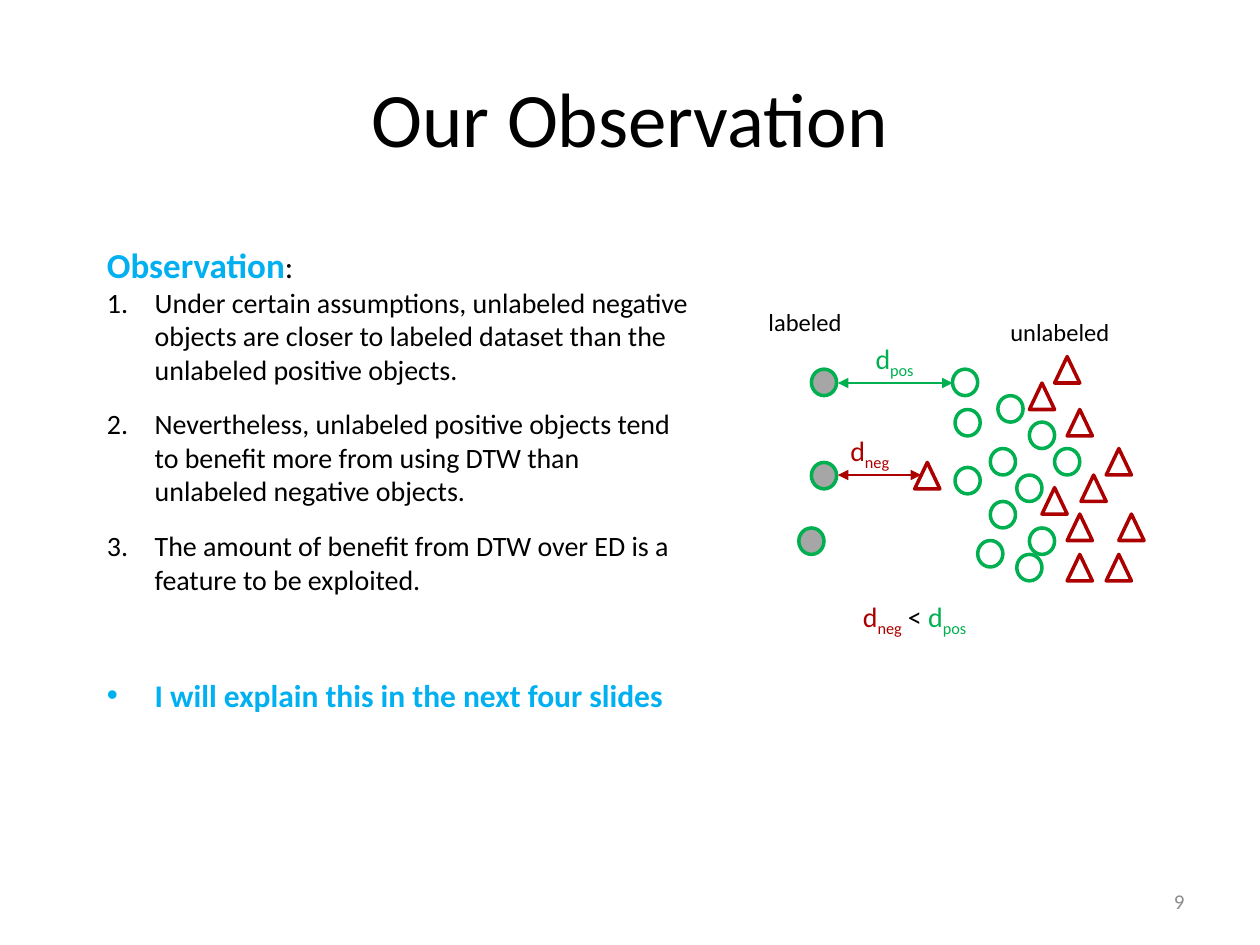
from lxml import etree
from pptx import Presentation
from pptx import util as u
from pptx.dml.color import RGBColor
from pptx.enum import shapes, text
from pptx.oxml.ns import qn

POSITIVE, NEGATIVE, LABELED = "00B050", "AC0000", "A6A6A6"
BLACK, ACCENT, MUTED = "000000", "00B0F0", "8C8C8C"
MARK_WIDTH, MARK_HEIGHT = 0.2, 0.21

LABELED_OBJECTS = [(6.44, 2.93), (6.34, 4.19), (6.44, 3.67)]
UNLABELED_POSITIVES = [
    (7.56, 2.93), (8.37, 3.56), (8.17, 3.35), (7.86, 3.56), (8.07, 3.77),
    (7.86, 3.98), (7.76, 4.29), (7.92, 3.14), (8.07, 4.4), (8.17, 4.19),
    (7.58, 3.25), (7.58, 3.71),
]
UNLABELED_NEGATIVES = [
    (7.26, 3.67), (8.37, 2.83), (8.47, 3.25), (8.58, 3.77), (8.27, 3.87),
    (8.47, 4.08), (8.47, 4.4), (8.88, 4.08), (8.78, 3.56), (8.78, 4.4),
    (8.17, 3.04),
]
FINDINGS = [
    "Under certain assumptions, unlabeled negative objects are closer to "
    "labeled dataset than the unlabeled positive objects.",
    "Nevertheless, unlabeled positive objects tend to benefit more from "
    "using DTW than unlabeled negative objects.",
    "The amount of benefit from DTW over ED is a feature to be exploited.",
]


def rgb(value):
    """Turn a hex string into a colour."""
    return RGBColor.from_string(value)


def set_format(target, values):
    """Set each named attribute on the target."""
    for name, value in values.items():
        setattr(target, name, value)


def add_run(paragraph, wording, size, color, bold=False, baseline=0):
    """Append a formatted run to a paragraph."""
    run = paragraph.add_run()
    run.text = wording
    set_format(run.font, {"name": "Calibri", "size": u.Pt(size), "bold": bold})
    run.font.color.rgb = rgb(color)
    if baseline:
        run.font._element.set("baseline", str(baseline))


def add_text_frame(slide, box, anchor=text.MSO_ANCHOR.TOP):
    """Add a wrapping text box and return its frame."""
    frame = slide.shapes.add_textbox(*map(u.Inches, box)).text_frame
    set_format(frame, {"word_wrap": True, "vertical_anchor": anchor})
    return frame


def add_label(slide, box, wording, size, color=BLACK, align=text.PP_ALIGN.LEFT,
              anchor=text.MSO_ANCHOR.TOP):
    """Add a text box holding one run."""
    paragraph = add_text_frame(slide, box, anchor).paragraphs[0]
    paragraph.alignment = align
    add_run(paragraph, wording, size, color)


def add_distance(paragraph, subscript, color):
    """Append a distance symbol with its subscript."""
    add_run(paragraph, "d", 16, color)
    add_run(paragraph, subscript, 16, color, baseline=-25000)


def add_list_item(frame, marker, attributes, wording, size, color=BLACK,
                  bold=False, before=0, after=0):
    """Add a paragraph with a hanging list marker."""
    paragraph = frame.add_paragraph()
    set_format(paragraph, {"space_before": u.Pt(before), "space_after": u.Pt(after)})
    properties = paragraph._p.get_or_add_pPr()
    properties.set("marL", str(u.Inches(0.38)))
    properties.set("indent", str(-u.Inches(0.38)))
    etree.SubElement(properties, qn("a:buFont"), typeface="Arial")
    etree.SubElement(properties, qn(marker), **attributes)
    add_run(paragraph, wording, size, color, bold)


def add_objects(slide, kind, positions, outline, fill=None):
    """Draw one class of data objects."""
    for left, top in positions:
        mark = slide.shapes.add_shape(
            kind, *map(u.Inches, (left, top, MARK_WIDTH, MARK_HEIGHT)))
        mark.shadow.inherit = False
        if fill:
            mark.fill.solid()
            mark.fill.fore_color.rgb = rgb(fill)
        else:
            mark.fill.background()
        mark.line.color.rgb = rgb(outline)
        mark.line.width = u.Pt(2)


def add_distance_arrow(slide, start, end, y, color):
    """Draw a horizontal arrow with a head at both ends."""
    arrow = slide.shapes.add_connector(
        shapes.MSO_CONNECTOR.STRAIGHT, *map(u.Inches, (start, y, end, y)))
    arrow.line.color.rgb = rgb(color)
    arrow.line.width = u.Pt(0.75)
    outline = arrow.line._get_or_add_ln()
    for tip in ("a:headEnd", "a:tailEnd"):
        etree.SubElement(outline, qn(tip), type="triangle")
    etree.SubElement(arrow._element.spPr, qn("a:effectLst"))


def add_observation(slide):
    """Write the heading, the numbered findings and the closing point."""
    frame = add_text_frame(slide, (0.75, 1.88, 4.83, 4.48))
    heading = frame.paragraphs[0]
    add_run(heading, "Observation", 20, ACCENT, bold=True)
    add_run(heading, ":", 18, BLACK)
    for finding in FINDINGS:
        add_list_item(frame, "a:buAutoNum", {"type": "arabicPeriod"},
                      finding, 16, after=12)
    add_list_item(frame, "a:buChar", {"char": "•"},
                  "I will explain this in the next four slides",
                  18, ACCENT, bold=True, before=34)


def add_diagram(slide):
    """Draw labeled and unlabeled objects with their distances."""
    circle, triangle = shapes.MSO_SHAPE.OVAL, shapes.MSO_SHAPE.ISOSCELES_TRIANGLE
    add_objects(slide, circle, LABELED_OBJECTS, POSITIVE, LABELED)
    add_objects(slide, circle, UNLABELED_POSITIVES, POSITIVE)
    add_objects(slide, triangle, UNLABELED_NEGATIVES, NEGATIVE)
    add_distance_arrow(slide, 6.65, 7.31, 3.77, NEGATIVE)
    add_distance_arrow(slide, 6.65, 7.56, 3.04, POSITIVE)
    for box, subscript, color in [
        ((6.85, 2.66, 1.02, 0.37), "pos", POSITIVE),
        ((6.65, 3.39, 0.61, 0.37), "neg", NEGATIVE),
    ]:
        add_distance(add_text_frame(slide, box).paragraphs[0], subscript, color)
    comparison = add_text_frame(slide, (6.75, 4.71, 1.73, 0.37)).paragraphs[0]
    add_distance(comparison, "neg", NEGATIVE)
    add_run(comparison, " < ", 16, BLACK)
    add_distance(comparison, "pos", POSITIVE)
    add_label(slide, (6, 2.39, 0.91, 0.34), "labeled", 14)
    add_label(slide, (7.92, 2.47, 1.12, 0.34), "unlabeled", 14)


def main():
    """Build and save the slide."""
    deck = Presentation()
    set_format(deck, {"slide_width": u.Inches(10), "slide_height": u.Inches(7.5)})
    slide = deck.slides.add_slide(deck.slide_layouts[6])
    add_observation(slide)
    add_label(slide, (0.5, 0.3, 9, 1.25), "Our Observation", 44,
              align=text.PP_ALIGN.CENTER, anchor=text.MSO_ANCHOR.MIDDLE)
    add_label(slide, (7.17, 6.95, 2.33, 0.4), "9", 12, MUTED,
              text.PP_ALIGN.RIGHT, text.MSO_ANCHOR.MIDDLE)
    add_diagram(slide)
    deck.save("out.pptx")


if __name__ == "__main__":
    main()
